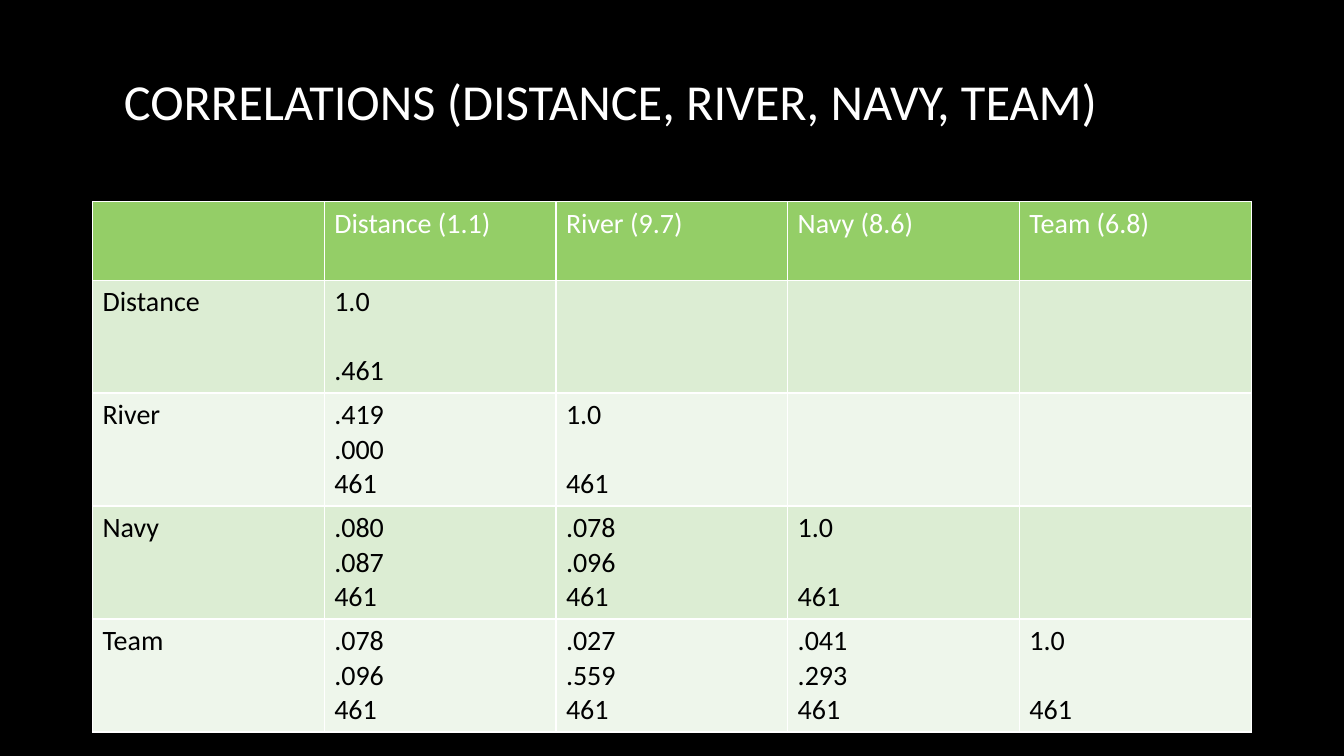
"""Build the slide with the correlation table of distance, river, navy and team."""
import pptx
import pptx.dml.color
import pptx.enum.text
import pptx.oxml
import pptx.oxml.ns
import pptx.util
from pptx.util import Cm, Pt

TITLE = "CORRELATIONS (DISTANCE, RIVER, NAVY, TEAM)"
HEADER = ["", "Distance (1.1)", "River (9.7)", "Navy (8.6)", "Team (6.8)"]
ROWS = [
    ["Distance", "1.0\n.461"],
    ["River", ".419\n.000\n461", "1.0\n461"],
    ["Navy", ".080\n.087\n461", ".078\n.096\n461", "1.0\n461"],
    ["Team", ".078\n.096\n461", ".027\n.559\n461", ".041\n.293\n461", "1.0\n461"],
]
HEADER_FILL = "94CE67"
BAND_FILLS = ["EEF6EB", "DCEDD3"]
LINE_HEIGHT = Pt(24.4)


def style_font(font, size, color):
    """Set the typeface, size and colour of a font."""
    font.name = "Calibri"
    font.size = Pt(size)
    font.bold = False
    font.color.rgb = pptx.dml.color.RGBColor.from_string(color)


def add_borders(cell):
    """Draw white lines on the four sides of a cell."""
    properties = cell._tc.get_or_add_tcPr()
    for side in "LRTB":
        properties.append(pptx.oxml.parse_xml(
            f'<a:ln{side} {pptx.oxml.ns.nsdecls("a")} w="{Pt(1)}">'
            f'<a:solidFill><a:srgbClr val="FFFFFF"/></a:solidFill></a:ln{side}>'))


presentation = pptx.Presentation()
presentation.slide_width = Cm(33.87)
presentation.slide_height = Cm(19.05)
slide = presentation.slides.add_slide(presentation.slide_layouts[5])
slide.background.fill.solid()
slide.background.fill.fore_color.rgb = pptx.dml.color.RGBColor.from_string("000000")

title = slide.shapes.title
title.left, title.top, title.width, title.height = Cm(2.87), Cm(0.51), Cm(28.14), Cm(4.04)
title.text_frame.text = TITLE
title.text_frame.vertical_anchor = pptx.enum.text.MSO_ANCHOR.MIDDLE
title.text_frame.paragraphs[0].alignment = pptx.enum.text.PP_ALIGN.LEFT
style_font(title.text_frame.paragraphs[0].runs[0].font, 36, "FFFFFF")

table = slide.shapes.add_table(
    len(ROWS) + 1, len(HEADER), Cm(2.33), Cm(5.08), Cm(29.2), Cm(13.34)).table
for column in table.columns:
    column.width = Cm(5.84)

for row_index, texts in enumerate([HEADER] + ROWS):
    is_header = row_index == 0
    table.rows[row_index].height = Cm(1.98 if is_header else 2.84)
    fill_color = HEADER_FILL if is_header else BAND_FILLS[row_index % 2]
    text_color = "FFFFFF" if is_header else "000000"
    for column_index in range(len(HEADER)):
        cell = table.cell(row_index, column_index)
        add_borders(cell)
        cell.fill.solid()
        cell.fill.fore_color.rgb = pptx.dml.color.RGBColor.from_string(fill_color)
        if column_index < len(texts):
            cell.text_frame.text = texts[column_index]
        paragraphs = cell.text_frame.paragraphs
        for paragraph in paragraphs:
            for run in paragraph.runs:
                style_font(run.font, 20, text_color)
        if len(paragraphs) == 2:
            paragraphs[1].space_before = LINE_HEIGHT

presentation.save("out.pptx")
